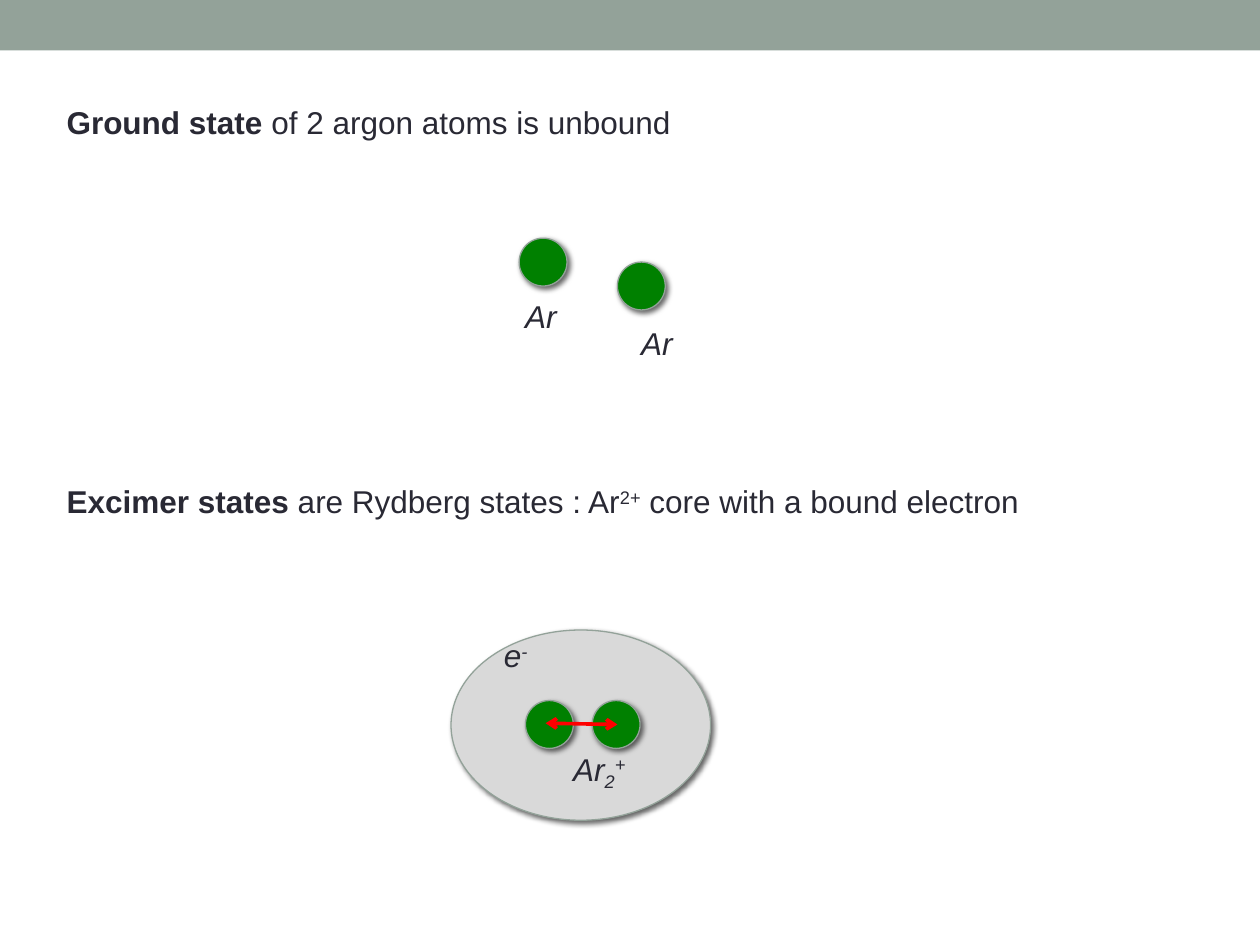
import pptx
import pptx.dml.color
import pptx.enum.shapes
import pptx.enum.text
import pptx.oxml
import pptx.oxml.ns
import pptx.util
from pptx.util import Inches

COLOURS = {
    "bar": "93A299",
    "cloud": "D9D9D9",
    "atom": "008000",
    "bond": "FF0000",
    "text": "292934",
    "shadow": "000000",
}
FONT = "Arial"
ATOM_SIZE = 0.38
SUPERSCRIPT, SUBSCRIPT = 30, -25  # percent of the text size


def colour(name):
    return pptx.dml.color.RGBColor.from_string(COLOURS[name])


def add_shadow(shape):
    """Soft shadow falling to the lower right."""
    blur, distance = pptx.util.Pt(3), pptx.util.Pt(2)
    shape._element.spPr.append(pptx.oxml.parse_xml(
        f'<a:effectLst {pptx.oxml.ns.nsdecls("a")}>'
        f'<a:outerShdw blurRad="{blur}" dist="{distance}" dir="2700000" rotWithShape="0">'
        f'<a:srgbClr val="{COLOURS["shadow"]}"><a:alpha val="60000"/></a:srgbClr>'
        '</a:outerShdw></a:effectLst>'))


def add_bar(page):
    bar = page.shapes.add_shape(
        pptx.enum.shapes.MSO_SHAPE.RECTANGLE, 0, 0, Inches(10), Inches(0.4))
    bar.shadow.inherit = False
    bar.fill.solid()
    bar.fill.fore_color.rgb = colour("bar")
    bar.line.fill.background()


def add_ellipse(page, left, top, width, height, fill):
    ellipse = page.shapes.add_shape(
        pptx.enum.shapes.MSO_SHAPE.OVAL,
        Inches(left), Inches(top), Inches(width), Inches(height))
    ellipse.fill.solid()
    ellipse.fill.fore_color.rgb = colour(fill)
    ellipse.line.color.rgb = colour("bar")
    ellipse.line.width = pptx.util.Pt(0.75)
    add_shadow(ellipse)


def add_atom(page, left, top):
    add_ellipse(page, left, top, ATOM_SIZE, ATOM_SIZE, "atom")


def add_double_arrow(page, start, end):
    arrow = page.shapes.add_connector(
        pptx.enum.shapes.MSO_CONNECTOR.STRAIGHT,
        *(Inches(value) for value in (*start, *end)))
    arrow.line.color.rgb = colour("bond")
    arrow.line.width = pptx.util.Pt(2.08)
    line = arrow.line._get_or_add_ln()
    namespace = pptx.oxml.ns.nsdecls("a")
    for tip in ("headEnd", "tailEnd"):
        line.append(pptx.oxml.parse_xml(f'<a:{tip} {namespace} type="arrow"/>'))
    arrow._element.spPr.append(pptx.oxml.parse_xml(f"<a:effectLst {namespace}/>"))


def add_span(para, text, bold=False, italic=False, baseline=0):
    span = para.add_run()
    span.text = text
    span.font.name = FONT
    span.font.size = pptx.util.Pt(18)
    span.font.color.rgb = colour("text")
    span.font.bold = bold
    span.font.italic = italic
    if baseline:
        span._r.get_or_add_rPr().set("baseline", str(baseline * 1000))


def add_text(page, left, top, width, height, paragraphs, gap=0, italic=False):
    """Each paragraph is a list of (text, format) pairs; gap is in points."""
    box = page.shapes.add_textbox(
        Inches(left), Inches(top), Inches(width), Inches(height))
    frame = box.text_frame
    frame.word_wrap = True
    frame.auto_size = pptx.enum.text.MSO_AUTO_SIZE.SHAPE_TO_FIT_TEXT
    for number, spans in enumerate(paragraphs):
        para = frame.add_paragraph() if number else frame.paragraphs[0]
        if number:
            para.space_before = pptx.util.Pt(gap)
        for text, style in spans:
            add_span(para, text, italic=italic, **style)


def add_label(page, left, top, width, spans):
    add_text(page, left, top, width, 0.4, [spans], italic=True)


def main():
    deck = pptx.Presentation()
    deck.slide_width, deck.slide_height = Inches(10), Inches(7.5)
    page = deck.slides.add_slide(deck.slide_layouts[6])
    add_bar(page)

    # Excimer: two bound atoms inside the electron cloud
    add_ellipse(page, 3.58, 5, 2.06, 1.51, "cloud")
    for left in (4.17, 4.7):
        add_atom(page, left, 5.56)
    add_double_arrow(page, (4.33, 5.74), (4.9, 5.75))
    add_label(page, 3.9, 5, 0.85, [("e", {}), ("-", {"baseline": SUPERSCRIPT})])
    add_label(page, 4.45, 5.9, 0.89, [
        ("Ar", {}),
        ("2", {"baseline": SUBSCRIPT}),
        ("+", {"baseline": SUPERSCRIPT}),
    ])

    # Statements above each drawing
    add_text(page, 0.43, 0.77, 8.98, 3.43, [
        [("Ground state ", {"bold": True}), ("of 2 argon atoms is unbound", {})],
        [
            ("Excimer states ", {"bold": True}),
            ("are Rydberg states : Ar", {}),
            ("2+", {"baseline": SUPERSCRIPT}),
            (" core with a bound electron", {}),
        ],
    ], gap=195)

    # Ground state: two separate atoms
    for left, top in ((4.12, 1.89), (4.9, 2.08)):
        add_atom(page, left, top)
    for left, top in ((4.07, 2.31), (4.99, 2.52)):
        add_label(page, left, top, 0.67, [("Ar", {})])

    deck.save("out.pptx")


if __name__ == "__main__":
    main()
